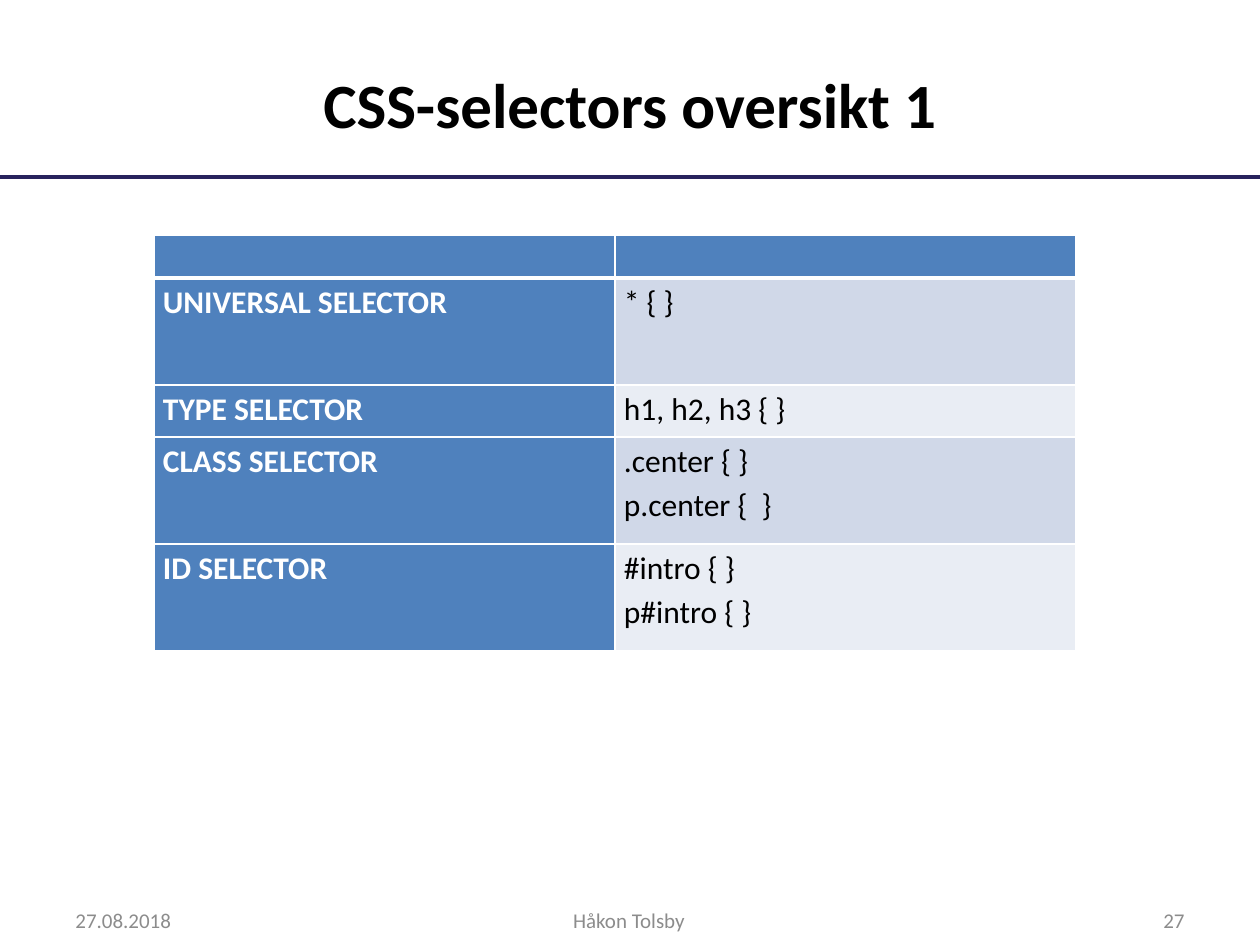
import pptx
import pptx.dml.color
import pptx.enum.shapes
import pptx.enum.text
import pptx.oxml.ns
import pptx.util
from lxml import etree

RGBColor = pptx.dml.color.RGBColor
Align = pptx.enum.text.PP_ALIGN
Anchor = pptx.enum.text.MSO_ANCHOR
qn = pptx.oxml.ns.qn

NAVY = RGBColor(0x28, 0x23, 0x5D)
BLUE = RGBColor(0x4F, 0x81, 0xBD)
BAND_DARK = RGBColor(0xD0, 0xD8, 0xE8)
BAND_LIGHT = RGBColor(0xE9, 0xED, 0xF4)
GRAY = RGBColor(0x8C, 0x8C, 0x8C)
BLACK = RGBColor(0, 0, 0)
WHITE = RGBColor(0xFF, 0xFF, 0xFF)
FONT = "Calibri"
PX_PER_INCH = 126

SELECTORS = [
    ("UNIVERSAL SELECTOR", ["* { }"]),
    ("TYPE SELECTOR", ["h1, h2, h3 { }"]),
    ("CLASS SELECTOR", [".center { }", "p.center {  }"]),
    ("ID SELECTOR", ["#intro { }", "p#intro { }"]),
]
ROW_HEIGHTS = [43, 107, 52, 107, 107]


def px(length):
    return pptx.util.Emu(round(length * 914400 / PX_PER_INCH))


def add_run(paragraph, text, size, color, bold=False):
    run = paragraph.add_run()
    run.text = text
    run.font.name = FONT
    run.font.size = pptx.util.Pt(size)
    run.font.bold = bold
    run.font.color.rgb = color


def place_title(slide, left, top, width, height):
    title = slide.shapes.title
    title.left, title.top, title.width, title.height = map(px, (left, top, width, height))
    title.text_frame.vertical_anchor = Anchor.MIDDLE
    heading = title.text_frame.paragraphs[0]
    heading.alignment = Align.CENTER
    add_run(heading, "CSS-selectors oversikt 1", 36, BLACK, True)


def add_rule(slide, left, top, width):
    rule = slide.shapes.add_connector(
        pptx.enum.shapes.MSO_CONNECTOR.STRAIGHT,
        px(left), px(top), px(left + width), px(top))
    rule.line.color.rgb = NAVY
    rule.line.width = pptx.util.Pt(2)
    etree.SubElement(rule._element.spPr, qn("a:effectLst"))


def set_borders(cell, top, bottom):
    properties = cell._tc.get_or_add_tcPr()
    for side, weight in (("L", 1), ("R", 1), ("T", top), ("B", bottom)):
        border = etree.SubElement(properties, qn(f"a:ln{side}"), w=str(pptx.util.Pt(weight)))
        fill = etree.SubElement(border, qn("a:solidFill"))
        etree.SubElement(fill, qn("a:srgbClr"), val=str(WHITE))


def fill_cell(cell, lines, background, color, bold):
    cell.margin_left = cell.margin_right = px(9)
    cell.margin_top = cell.margin_bottom = 0
    cell.fill.solid()
    cell.fill.fore_color.rgb = background
    for index, line in enumerate(lines):
        frame = cell.text_frame
        paragraph = frame.add_paragraph() if index else frame.paragraphs[0]
        paragraph.line_spacing = 1.15
        add_run(paragraph, line, 18, color, bold)


def add_selector_table(slide, left, top, width):
    rows = [("", [])] + SELECTORS
    overview = slide.shapes.add_table(
        len(rows), 2, px(left), px(top), px(width), px(sum(ROW_HEIGHTS))).table
    for column in overview.columns:
        column.width = px(width / 2)
    for index, (selector, examples) in enumerate(rows):
        overview.rows[index].height = px(ROW_HEIGHTS[index])
        band = BAND_DARK if index % 2 else BAND_LIGHT
        name_cell, example_cell = overview.cell(index, 0), overview.cell(index, 1)
        for cell in (name_cell, example_cell):
            set_borders(cell, 3 if index == 1 else 1, 3 if index == 0 else 1)
        fill_cell(name_cell, [selector] if selector else [], BLUE, WHITE, True)
        fill_cell(example_cell, examples, band if index else BLUE, BLACK, False)


def add_footer(slide, left, top, width, height):
    side_width, author_width = 294, 400
    entries = [
        ("27.08.2018", 0, side_width, Align.LEFT),
        ("Håkon Tolsby", (width - author_width) // 2 - 1, author_width, Align.CENTER),
        ("27", width - side_width, side_width, Align.RIGHT),
    ]
    for text, offset, entry_width, alignment in entries:
        entry = slide.shapes.add_textbox(
            px(left + offset), px(top), px(entry_width), px(height))
        frame = entry.text_frame
        frame.word_wrap = True
        frame.vertical_anchor = Anchor.MIDDLE
        frame.paragraphs[0].alignment = alignment
        add_run(frame.paragraphs[0], text, 12, GRAY)


def main():
    deck = pptx.Presentation()
    deck.slide_width, deck.slide_height = px(1260), px(945)
    slide = deck.slides.add_slide(deck.slide_layouts[5])
    add_rule(slide, 0, 177, 1260)
    place_title(slide, 63, 38, 1134, 130)
    add_footer(slide, 63, 895, 1134, 50)
    add_selector_table(slide, 154, 235, 922)
    deck.save("out.pptx")


if __name__ == "__main__":
    main()
